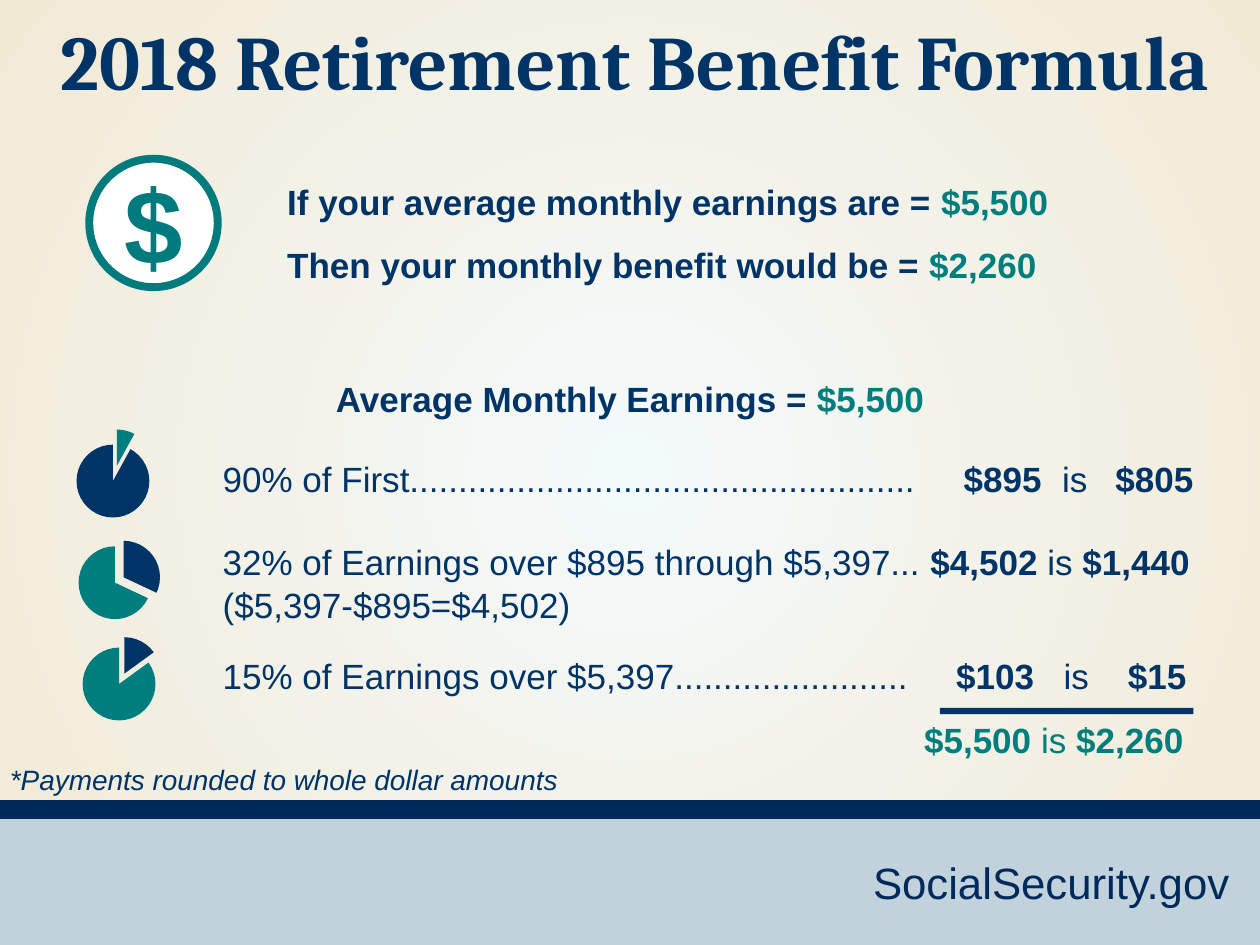
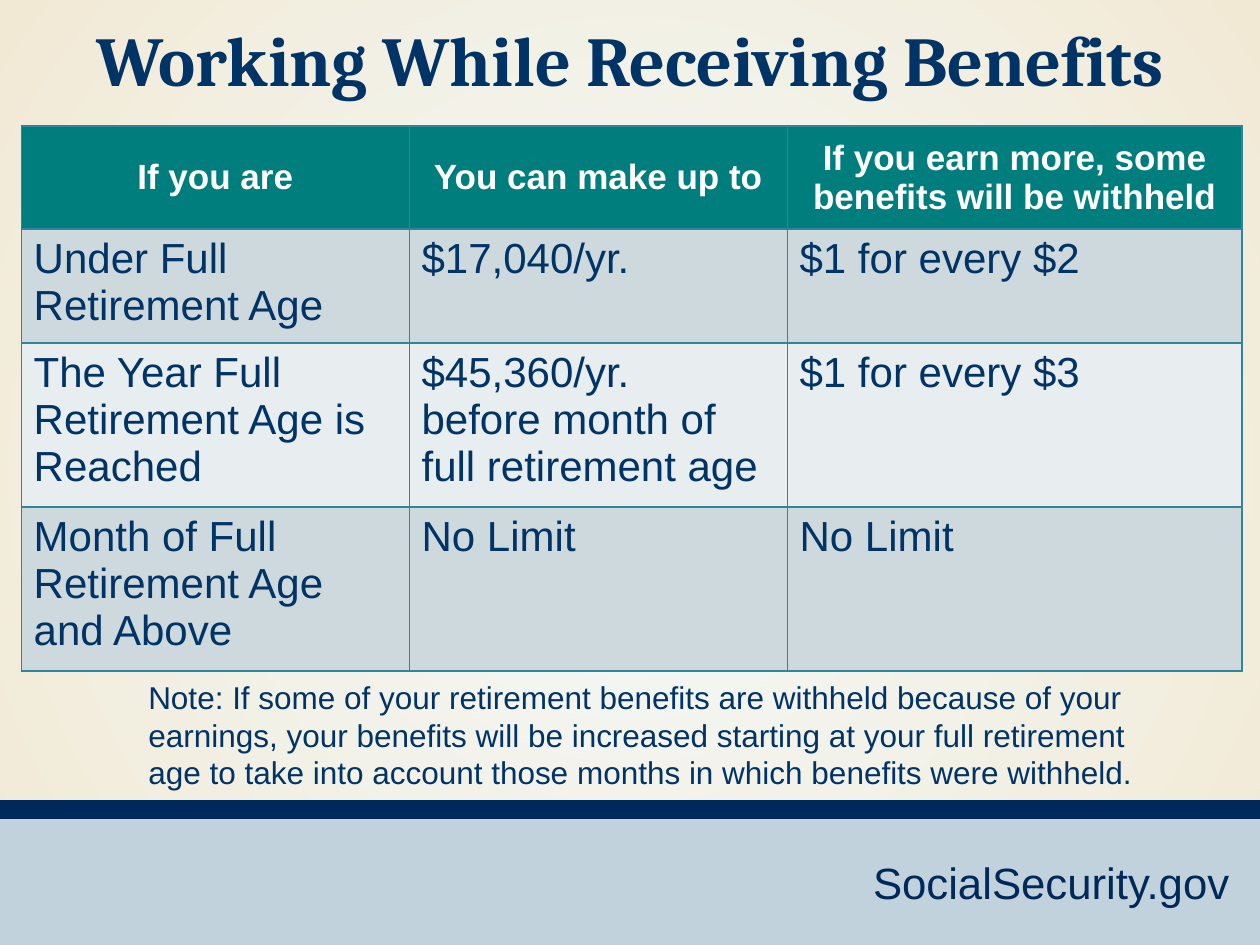
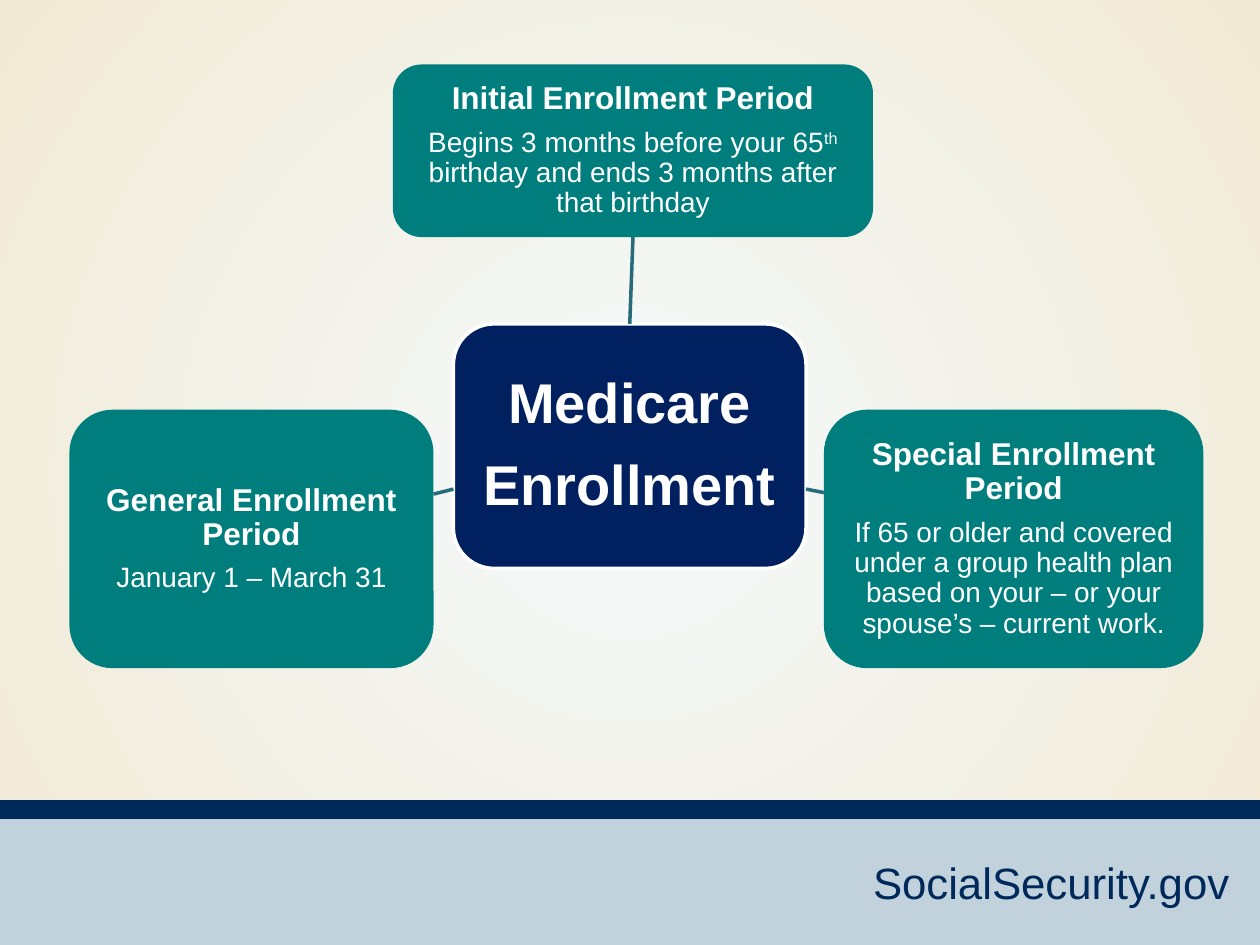
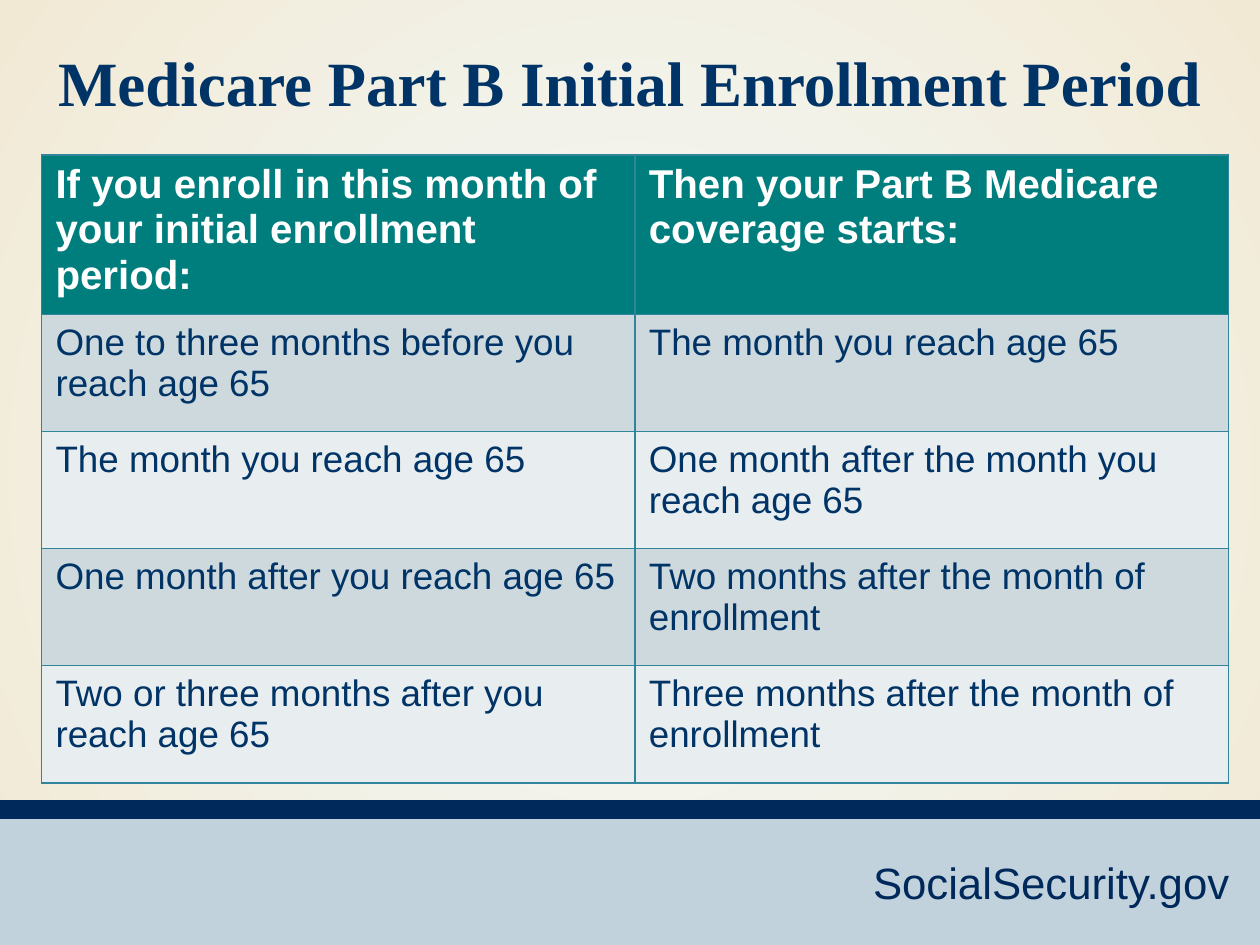
"""Build four slides on retirement benefits and Medicare enrollment."""
from dataclasses import dataclass

from pptx import Presentation
from pptx import util as u
from pptx.chart import data
from pptx.dml.color import RGBColor
from pptx.enum import chart as charts, shapes, text
from pptx.oxml import parse_xml
from pptx.oxml.ns import nsdecls, qn


@dataclass(frozen=True)
class Theme:
    """Colours, fonts and type sizes of the deck."""
    navy: str = "003366"
    teal: str = "007D7D"
    ring: str = "007B7D"
    white: str = "FFFFFF"
    hub: str = "002060"
    link: str = "276B7C"
    band: str = "C1D2DC"
    stripe: str = "00295B"
    edge: str = "31859B"
    glow: str = "F3FAFB"
    sand: str = "F2E9D5"
    rows: tuple = ("CED9DE", "E8EDEF")
    sans: str = "Arial"
    serif: str = "Cambria"
    roman: str = "Times New Roman"
    tiny: int = 10
    small: int = 16
    note: int = 18
    body: int = 20
    cell: int = 24
    site: int = 25
    large: int = 32
    sign: int = 60
    heads: tuple = (44, 40, 36)
    grid: tuple = (23, 21)


def color(code):
    """Turn a hex code into a colour."""
    return RGBColor.from_string(code)


def lengths(*values):
    """Turn numbers into centimetre lengths."""
    return [u.Cm(value) for value in values]


class Deck:
    """Hold the style and the current slide."""

    def __init__(self, theme):
        self.theme = theme
        self.show = Presentation()
        self.show.slide_width, self.show.slide_height = lengths(25.4, 19.05)
        self.slide = None
        self.backdrop()

    def backdrop(self):
        """Give every slide the round gradient."""
        master = self.show.slide_master
        fill = master.background.fill
        fill.gradient()
        for stop, code in zip(fill.gradient_stops, (self.theme.glow, self.theme.sand)):
            stop.color.rgb = color(code)
        grad = master._element.find(".//" + qn("a:gradFill"))
        grad.replace(grad.find(qn("a:lin")), parse_xml(
            f'<a:path {nsdecls("a")} path="circle"><a:fillToRect l="50000" '
            't="50000" r="50000" b="50000"/></a:path>'))

    def page(self):
        """Start a slide with its footer."""
        t = self.theme
        self.slide = self.show.slides.add_slide(self.show.slide_layouts[6])
        self.shape((0, 16.38, 25.4, 2.67), t.band)
        self.shape((0, 16.13, 25.4, 0.38), t.stripe)
        self.label((17.35, 17.12, 7.8, 1.32), [["SocialSecurity.gov"]],
                   size=t.site, tint=t.stripe)

    def put(self, frame, paras, size=None, tint=None, font=None, bold=False,
            italic=False, center=False, lead=None, gap=0, tabs=()):
        """Fill a frame run by run; a run is text or (text, changes)."""
        t = self.theme
        for i, runs in enumerate(paras):
            para = frame.add_paragraph() if i else frame.paragraphs[0]
            para.alignment = text.PP_ALIGN.CENTER if center else text.PP_ALIGN.LEFT
            if tabs:
                stops = "".join(f'<a:tab pos="{u.Cm(at)}" algn="{side}"/>'
                                for at, side in tabs)
                para._p.get_or_add_pPr().append(parse_xml(
                    f'<a:tabLst {nsdecls("a")}>{stops}</a:tabLst>'))
            if lead:
                para.line_spacing = lead
            if gap and i < len(paras) - 1:
                para.space_after = u.Pt(gap)
            for item in runs:
                words, marks = (item, {}) if isinstance(item, str) else item
                for j, line in enumerate(words.split("\n")):
                    if j:
                        para.add_line_break()
                    run = para.add_run()
                    run.text = line
                    run.font.name = font or t.sans
                    run.font.size = u.Pt(marks.get("size", size or t.body))
                    run.font.bold = marks.get("bold", bold)
                    run.font.italic = italic
                    run.font.color.rgb = color(marks.get("tint", tint or t.navy))
                    if "base" in marks:
                        run._r.get_or_add_rPr().set("baseline", marks["base"])

    def label(self, box, paras, **style):
        """Add a text box."""
        frame = self.slide.shapes.add_textbox(*lengths(*box)).text_frame
        frame.word_wrap = True
        frame.auto_size = text.MSO_AUTO_SIZE.SHAPE_TO_FIT_TEXT
        self.put(frame, paras, **style)

    def title(self, box, words, size, font):
        """Add a bold heading."""
        self.label(box, [[words]], size=size, font=font, bold=True, center=True)

    def shape(self, box, fill, kind=shapes.MSO_SHAPE.RECTANGLE, line=None, width=0):
        """Add a flat preset shape."""
        form = self.slide.shapes.add_shape(kind, *lengths(*box))
        form.shadow.inherit = False
        form.fill.solid()
        form.fill.fore_color.rgb = color(fill)
        if line:
            form.line.color.rgb = color(line)
            form.line.width = u.Pt(width)
        else:
            form.line.fill.background()
        return form

    def card(self, box, fill, paras, size, inset, gap, line=None):
        """Add a rounded box with centred text."""
        form = self.shape(box, fill, shapes.MSO_SHAPE.ROUNDED_RECTANGLE, line, 2)
        frame = form.text_frame
        frame.word_wrap = True
        frame.vertical_anchor = text.MSO_ANCHOR.MIDDLE
        frame.margin_left = frame.margin_right = u.Cm(inset)
        frame.margin_top = frame.margin_bottom = u.Cm(inset)
        self.put(frame, paras, size=size, tint=self.theme.white, bold=True,
                 center=True, lead=0.9, gap=gap)
        return form

    def link(self, ends=(0, 0, 0, 0), start=None, stop=None):
        """Add a line, joined to (shape, side) pairs when given."""
        line = self.slide.shapes.add_connector(
            shapes.MSO_CONNECTOR.STRAIGHT, *lengths(*ends))
        if start:
            line.begin_connect(*start)
        if stop:
            line.end_connect(*stop)
        line.line.color.rgb = color(self.theme.link)
        line.line.width = u.Pt(2)
        line._element.spPr.append(parse_xml(f'<a:effectLst {nsdecls("a")}/>'))

    def pie(self, box, mid, share, tints, burst):
        """Add a pie centred on mid whose first slice is pulled out."""
        t = self.theme
        side = 1.47
        source = data.CategoryChartData()
        source.categories = ["1", "2"]
        source.add_series("Series 1", (share, 100 - share))
        chart = self.slide.shapes.add_chart(
            charts.XL_CHART_TYPE.PIE, *lengths(*box), source).chart
        chart.has_legend = chart.has_title = False
        chart.font.name, chart.font.size = t.sans, u.Pt(t.tiny)
        chart.font.color.rgb = color(t.navy)
        plot = chart.plots[0]
        plot.vary_by_categories = True
        series = plot.series[0]
        for i, tint in enumerate(tints):
            fill = series.points[i].format.fill
            fill.solid()
            fill.fore_color.rgb = color(tint)
        series._element.find(qn("c:dPt")).find(qn("c:spPr")).addprevious(
            parse_xml(f'<c:explosion {nsdecls("c")} val="{burst}"/>'))
        left, top, width, height = box
        spots = {"x": (mid[0] - side / 2 - left) / width,
                 "y": (mid[1] - side / 2 - top) / height,
                 "w": side / width, "h": side / height}
        area = chart._chartSpace.find(".//" + qn("c:plotArea"))
        for old in area.findall(qn("c:layout")):
            area.remove(old)
        parts = "".join(f'<c:{key}Mode val="edge"/>' for key in "xy")
        parts += "".join(f'<c:{key} val="{spot:.3f}"/>' for key, spot in spots.items())
        area.insert(0, parse_xml(
            f'<c:layout {nsdecls("c")}><c:manualLayout><c:layoutTarget val="inner"/>'
            f'{parts}</c:manualLayout></c:layout>'))

    def table(self, spot, cols, rows, cells, sizes, pads, center=False):
        """Add a striped table with a teal header."""
        t = self.theme
        grid = self.slide.shapes.add_table(
            len(rows), len(cols), *lengths(*spot, sum(cols), sum(rows))).table
        for part, size in zip(grid.columns, cols):
            part.width = u.Cm(size)
        for part, size in zip(grid.rows, rows):
            part.height = u.Cm(size)
        for i, line in enumerate(cells):
            head = i == 0
            for j, words in enumerate(line):
                cell = grid.cell(i, j)
                cell.margin_left = cell.margin_right = u.Cm(pads[0])
                cell.margin_top = cell.margin_bottom = u.Cm(pads[1])
                if head and center:
                    cell.vertical_anchor = text.MSO_ANCHOR.MIDDLE
                for side in "LRTB":
                    cell._tc.get_or_add_tcPr().append(parse_xml(
                        f'<a:ln{side} {nsdecls("a")} w="{u.Pt(1)}"><a:solidFill>'
                        f'<a:srgbClr val="{t.edge}"/></a:solidFill></a:ln{side}>'))
                cell.fill.solid()
                cell.fill.fore_color.rgb = color(t.teal if head else t.rows[(i - 1) % 2])
                self.put(cell.text_frame, [[words]], size=sizes[0 if head else 1],
                         tint=t.white if head else t.navy, bold=head,
                         center=head and center)


def formula(deck):
    """Show the benefit formula."""
    t = deck.theme
    teal, bold, plain = {"tint": t.teal}, {"bold": True}, {"bold": False}
    deck.page()
    deck.pie((0.43, 8.38, 3.84, 2.21), (2.28, 9.7), 8, (t.teal, t.navy), 43)
    deck.pie((0.84, 10.62, 3.25, 2.11), (2.32, 11.75), 32, (t.navy, t.teal), 28)
    deck.pie((0.84, 12.55, 3.28, 2.18), (2.4, 13.79), 15, (t.navy, t.teal), 32)
    deck.title((0.84, 0.15, 23.93, 2.13), "2018 Retirement Benefit Formula",
               t.heads[0], t.serif)
    deck.label((5.54, 3.1, 17.78, 2.82), [
        ["If your average monthly earnings are = ", ("$5,500", teal)],
        ["Then your monthly benefit would be = ", ("$2,260", teal)]], bold=True, lead=1.5)
    deck.label((0, 7.49, 25.4, 1.12),
               [["Average Monthly Earnings = ", ("$5,500", teal)]], bold=True, center=True)
    left = 4.24
    deck.label((left, 9.09, 20.12, 1.12), [
        ["90% of First" + "." * 52, ("\t$895", bold), "\tis", ("\t$805", bold)]],
        tabs=((16.51, "r"), (16.92, "l"), (19.57, "r")))
    deck.label((left, 10.77, 20.75, 1.12), [
        ["32% of Earnings over $895 through $5,397... ", ("$4,502 ", bold), "is",
         (" $1,440", bold)]])
    deck.label((left, 11.63, 8.38, 1.12), [["($5,397-$895=$4,502)"]])
    deck.label((left, 13.06, 20.19, 1.12), [
        ["15% of Earnings over $5,397" + "." * 24, ("\t$103", bold), "\tis",
         ("\t$15", bold)]],
        tabs=((16.36, "r"), (16.95, "l"), (19.43, "r")))
    deck.label((18.38, 14.35, 5.98, 1.12), [["$5,500 ", ("is", plain), " $2,260"]],
               tint=t.teal, bold=True)
    deck.shape((18.95, 14.27, 5.11, 0.13), t.navy)
    deck.label((-0.05, 15.24, 11.68, 0.94),
               [["*Payments rounded to whole dollar amounts"]], size=t.small, italic=True)
    coin = deck.shape((1.8, 3.2, 2.59, 2.59), t.white, shapes.MSO_SHAPE.OVAL, t.ring, 4.5)
    coin.text_frame.vertical_anchor = text.MSO_ANCHOR.MIDDLE
    deck.put(coin.text_frame, [["$"]], size=t.sign, tint=t.ring, bold=True, center=True)


def working(deck):
    """Show the earnings limits."""
    t = deck.theme
    deck.page()
    deck.table((0.43, 2.54), (7.82, 7.62, 9.17), (2.08, 2.29, 3.3, 3.3), [
        ("If you are", "You can make up to",
         "If you earn more, some benefits will be withheld"),
        ("Under Full Retirement Age", "$17,040/yr.", "$1 for every $2"),
        ("The Year Full Retirement Age is Reached",
         "$45,360/yr.\nbefore month of full retirement age", "$1 for every $3"),
        ("Month of Full Retirement Age\nand Above", "No Limit", "No Limit"),
    ], (t.body, t.cell), (0.25, 0.13), center=True)
    deck.label((2.74, 13.54, 20.45, 2.57), [[
        "Note: If some of your retirement benefits are withheld because of your earnings, "
        "your benefits will be increased starting at your full retirement age to take "
        "into account those months in which benefits were withheld."]], size=t.note)
    deck.title((0, 0.2, 25.4, 1.96), "Working While Receiving Benefits",
               t.heads[1], t.serif)


def periods(deck):
    """Show the three enrollment periods."""
    t = deck.theme
    soft = {"size": t.small, "bold": False}
    deck.page()
    hub = deck.card((9.14, 6.53, 7.11, 4.93), t.hub, [["Medicare"], ["Enrollment"]],
                    t.large, 0.23, 12, t.white)
    cards = [deck.card(box, t.teal, [[name], runs], t.note, 0.13, 6.7)
             for box, name, runs in (
        ((7.92, 1.3, 9.68, 3.48), "Initial Enrollment Period",
         [("Begins 3 months before your 65", soft), ("th", {**soft, "base": "30000"}),
          (" birthday and ends 3 months after that birthday", soft)]),
        ((16.61, 8.26, 7.65, 5.21), "Special Enrollment Period",
         [("If 65 or older and covered under a group health plan based on your – or "
           "your spouse’s – current work.", soft)]),
        ((1.4, 8.26, 7.34, 5.21), "General Enrollment Period",
         [("January 1 – March 31", soft)]))]
    deck.link(start=(hub, 0), stop=(cards[0], 2))
    deck.link((16.25, 9.86, 16.61, 9.93))
    deck.link((9.14, 9.86, 8.74, 9.96))


def coverage(deck):
    """Show when Part B coverage starts."""
    t = deck.theme
    deck.page()
    deck.table((0.84, 3.12), (11.96,) * 2, (3.2,) + (2.36,) * 4, [
        ("If you enroll in this month of your initial enrollment period:",
         "Then your Part B Medicare coverage starts:"),
        ("One to three months before you reach age 65", "The month you reach age 65"),
        ("The month you reach age 65", "One month after the month you reach age 65"),
        ("One month after you reach age 65", "Two months after the month of enrollment"),
        ("Two or three months after you reach age 65",
         "Three months after the month of enrollment"),
    ], t.grid, (0.28, 0.15))
    deck.title((0, 0.76, 25.4, 1.8), "Medicare Part B Initial Enrollment Period",
               t.heads[2], t.roman)


def main():
    """Build and save the deck."""
    deck = Deck(Theme())
    for build in (formula, working, periods, coverage):
        build(deck)
    deck.show.save("out.pptx")


if __name__ == "__main__":
    main()
